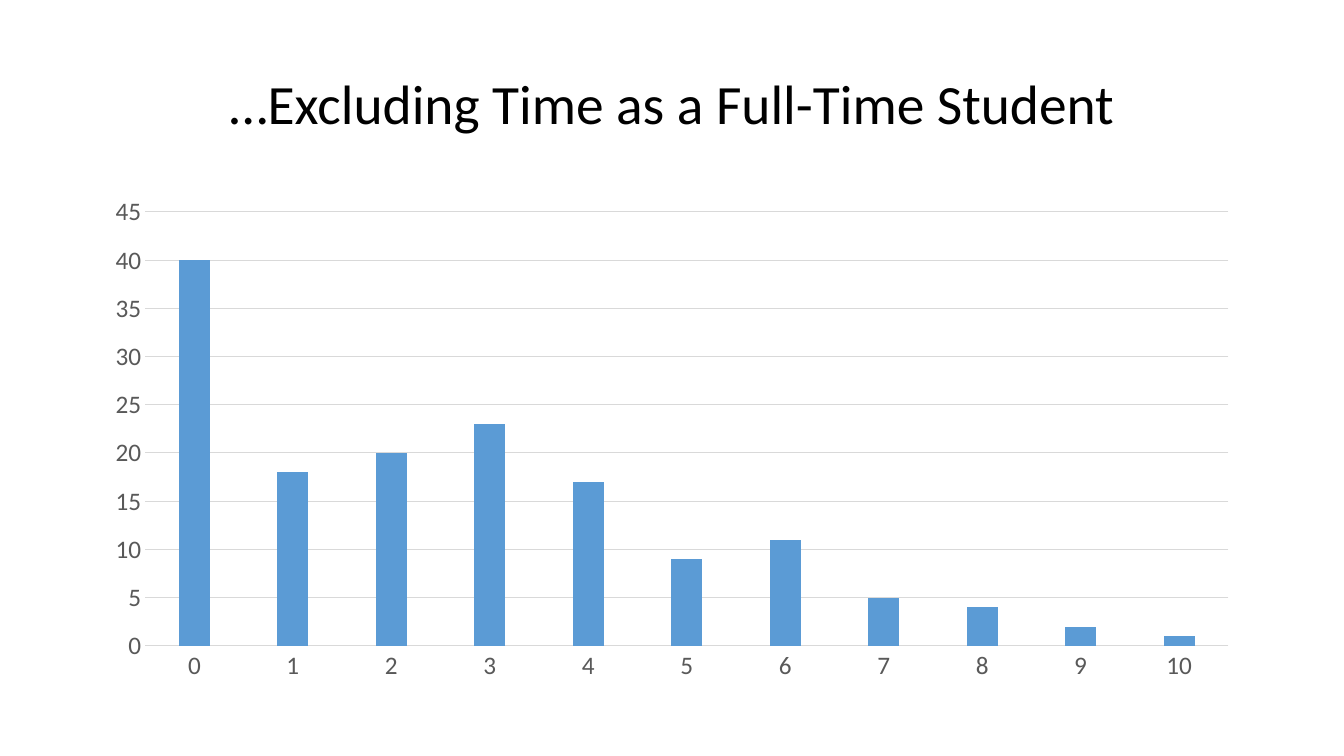
import pptx
import pptx.util
import pptx.chart.data
import pptx.dml.color
import pptx.enum.chart
import pptx.enum.text

Cm = pptx.util.Cm
Pt = pptx.util.Pt
RGBColor = pptx.dml.color.RGBColor

HEADING = "…Excluding Time as a Full-Time Student"
STUDENT_COUNTS = [40, 18, 20, 23, 17, 9, 11, 5, 4, 2, 1]
YEARS = [str(year) for year in range(len(STUDENT_COUNTS))]

FONT = "Calibri"
BLACK = RGBColor(0x00, 0x00, 0x00)
GRAY = RGBColor(0x59, 0x59, 0x59)
LIGHT_GRAY = RGBColor(0xD9, 0xD9, 0xD9)
BLUE = RGBColor(0x5B, 0x9B, 0xD5)

LEFT, WIDTH = Cm(2.33), Cm(29.21)


def style_font(font, size, color):
    font.name = FONT
    font.size = Pt(size)
    font.color.rgb = color


def style_line(line):
    line.color.rgb = LIGHT_GRAY
    line.width = Pt(0.75)


def add_heading(slide):
    heading = slide.shapes.add_textbox(LEFT, Cm(1.5), WIDTH, Cm(2.39)).text_frame
    heading.word_wrap = True
    heading.vertical_anchor = pptx.enum.text.MSO_ANCHOR.MIDDLE
    line = heading.paragraphs[0]
    line.text = HEADING
    line.alignment = pptx.enum.text.PP_ALIGN.CENTER
    line.line_spacing = 0.9
    style_font(line.font, 39.6, BLACK)


def add_histogram(slide):
    counts = pptx.chart.data.CategoryChartData()
    counts.categories = YEARS
    counts.add_series("Series 1", STUDENT_COUNTS)
    histogram = slide.shapes.add_chart(
        pptx.enum.chart.XL_CHART_TYPE.COLUMN_CLUSTERED,
        LEFT, Cm(4.7), WIDTH, Cm(12.7), counts).chart
    histogram.has_title = False
    histogram.has_legend = False
    style_font(histogram.font, 10, BLACK)

    bars = histogram.plots[0]
    bars.vary_by_categories = False
    bars.gap_width = 219
    bars.overlap = -27
    bars.series[0].format.fill.solid()
    bars.series[0].format.fill.fore_color.rgb = BLUE

    year_axis, count_axis = histogram.category_axis, histogram.value_axis
    for axis in (year_axis, count_axis):
        axis.major_tick_mark = pptx.enum.chart.XL_TICK_MARK.NONE
        axis.minor_tick_mark = pptx.enum.chart.XL_TICK_MARK.NONE
        style_font(axis.tick_labels.font, 18, GRAY)
    style_line(year_axis.format.line)
    count_axis.minimum_scale = 0
    count_axis.maximum_scale = 45
    count_axis.major_unit = 5
    count_axis.format.line.fill.background()
    count_axis.has_major_gridlines = True
    style_line(count_axis.major_gridlines.format.line)


def main():
    deck = pptx.Presentation()
    deck.slide_width = Cm(33.87)
    deck.slide_height = Cm(19.05)
    slide = deck.slides.add_slide(deck.slide_layouts[6])
    add_heading(slide)
    add_histogram(slide)
    deck.save("out.pptx")


if __name__ == "__main__":
    main()
